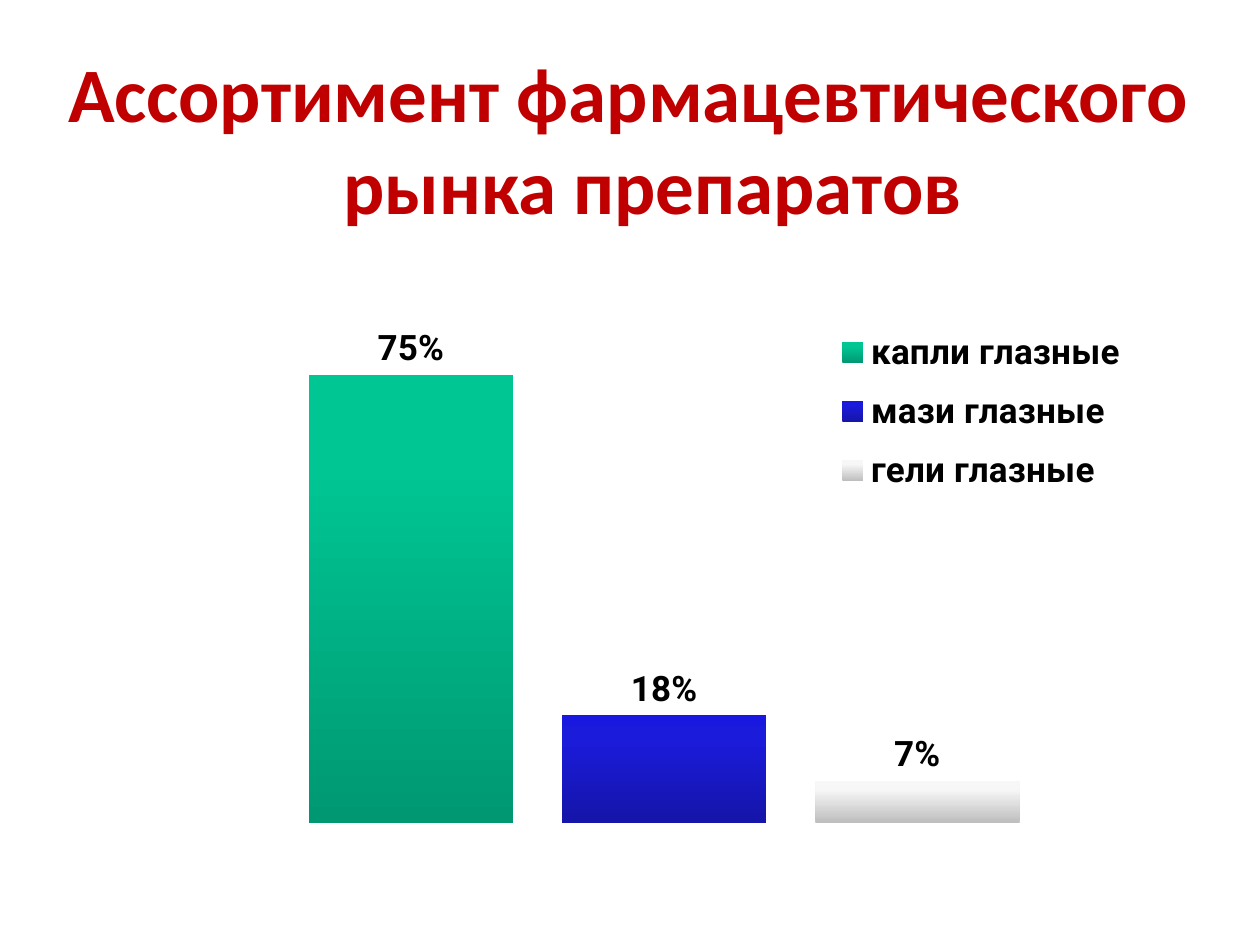
from copy import deepcopy

from pptx import Presentation
from pptx.chart.data import CategoryChartData
from pptx.dml.color import RGBColor
from pptx.enum.chart import XL_CHART_TYPE, XL_LABEL_POSITION, XL_LEGEND_POSITION
from pptx.enum.text import PP_ALIGN
from pptx.oxml import parse_xml
from pptx.oxml.ns import nsdecls
from pptx.util import Cm, Pt

COLUMNS = XL_CHART_TYPE.COLUMN_CLUSTERED
OUTSIDE_END = XL_LABEL_POSITION.OUTSIDE_END
RIGHT = XL_LEGEND_POSITION.RIGHT
CENTER = PP_ALIGN.CENTER

TITLE = "Ассортимент фармацевтического рынка препаратов"
SHARES = [
    ("капли глазные", 0.75, "green"),
    ("мази глазные", 0.18, "blue"),
    ("гели глазные", 0.07, "gray"),
]
COLORS = {
    "title": "C00000",
    "text": "000000",
    "green": ("009872", "00C694", "00C795"),
    "blue": ("1515A9", "1B1BDC", "1818E1"),
    "gray": ("BEBEBE", "F7F7F7", "F8F8F8"),
}
STOP_POSITIONS = (0, 0.8, 1)
PLOT_LAYOUT = {"x": 0.05, "y": 0.2, "w": 0.88, "h": 0.79}
LEGEND_LAYOUT = {"x": 0.64, "y": 0.15, "w": 0.31, "h": 0.32}


def style_font(font, name, size, color):
    font.name = name
    font.size = Pt(size)
    font.bold = True
    font.color.rgb = RGBColor.from_string(COLORS[color])


def add_title(slide):
    frame = slide.shapes.add_textbox(Cm(1.27), Cm(0.91), Cm(22.83), Cm(4.2)).text_frame
    frame.word_wrap = True
    frame.margin_left = frame.margin_right = frame.margin_top = frame.margin_bottom = 0
    paragraph = frame.paragraphs[0]
    paragraph.text = TITLE
    paragraph.alignment = CENTER
    paragraph.space_before = Pt(8)
    properties = paragraph._p.get_or_add_pPr()
    properties.set("marL", str(Cm(0.95)))
    properties.set("indent", str(Cm(-0.95)))
    style_font(paragraph.font, "Calibri", 44, "title")


def set_layout(parent, previous, layout, target=""):
    for old in parent.xpath("./c:layout"):
        parent.remove(old)
    modes = "".join(f'<c:{axis}Mode val="edge"/>' for axis in "xy")
    sizes = "".join(f'<c:{key} val="{value}"/>' for key, value in layout.items())
    element = parse_xml(
        f'<c:layout {nsdecls("c")}><c:manualLayout>{target}{modes}{sizes}'
        "</c:manualLayout></c:layout>"
    )
    if previous is None:
        parent.insert(0, element)
    else:
        previous.addnext(element)


def fill_gradient(series, colors):
    fill = series.format.fill
    fill.gradient()
    fill.gradient_angle = 90
    stop_list = series._element.xpath(".//a:gsLst")[0]
    stop_list.append(deepcopy(stop_list[0]))
    for stop, position, color in zip(fill.gradient_stops, STOP_POSITIONS, colors):
        stop.position = position
        stop.color.rgb = RGBColor.from_string(color)


def add_shares_chart(slide):
    data = CategoryChartData(number_format="0%")
    data.categories = ["1"]
    for name, share, _ in SHARES:
        data.add_series(name, [share])
    chart = slide.shapes.add_chart(
        COLUMNS, Cm(3.12), Cm(4.52), Cm(20.96), Cm(12.19), data
    ).chart
    chart.has_title = False
    chart.font.name = "Roboto"
    chart.font.size = Pt(10)

    chart.value_axis.minimum_scale = 0
    chart.value_axis.maximum_scale = 0.8
    for axis in (chart.value_axis, chart.category_axis):
        axis.has_major_gridlines = False
        axis.visible = False

    plot = chart.plots[0]
    plot.vary_by_categories = False
    plot.gap_width = 100
    plot.overlap = -24
    for series, (_, _, color) in zip(plot.series, SHARES):
        fill_gradient(series, COLORS[color])
        labels = series.data_labels
        labels.show_value = True
        labels.position = OUTSIDE_END
        labels.number_format = "0%"
        labels.number_format_is_linked = False
        style_font(labels.font, "Roboto", 20, "text")

    chart.has_legend = True
    legend = chart.legend
    legend.position = RIGHT
    legend.include_in_layout = False
    style_font(legend.font, "Roboto", 20, "text")

    plot_area = chart._chartSpace.xpath(".//c:plotArea")[0]
    set_layout(plot_area, None, PLOT_LAYOUT, '<c:layoutTarget val="inner"/>')
    legend_element = chart._chartSpace.xpath(".//c:legend")[0]
    legend_position = legend_element.xpath("./c:legendPos")[0]
    set_layout(legend_element, legend_position, LEGEND_LAYOUT)


def main():
    presentation = Presentation()
    presentation.slide_width = Cm(25.4)
    presentation.slide_height = Cm(19.05)
    slide = presentation.slides.add_slide(presentation.slide_layouts[6])
    add_title(slide)
    add_shares_chart(slide)
    presentation.save("out.pptx")


if __name__ == "__main__":
    main()
